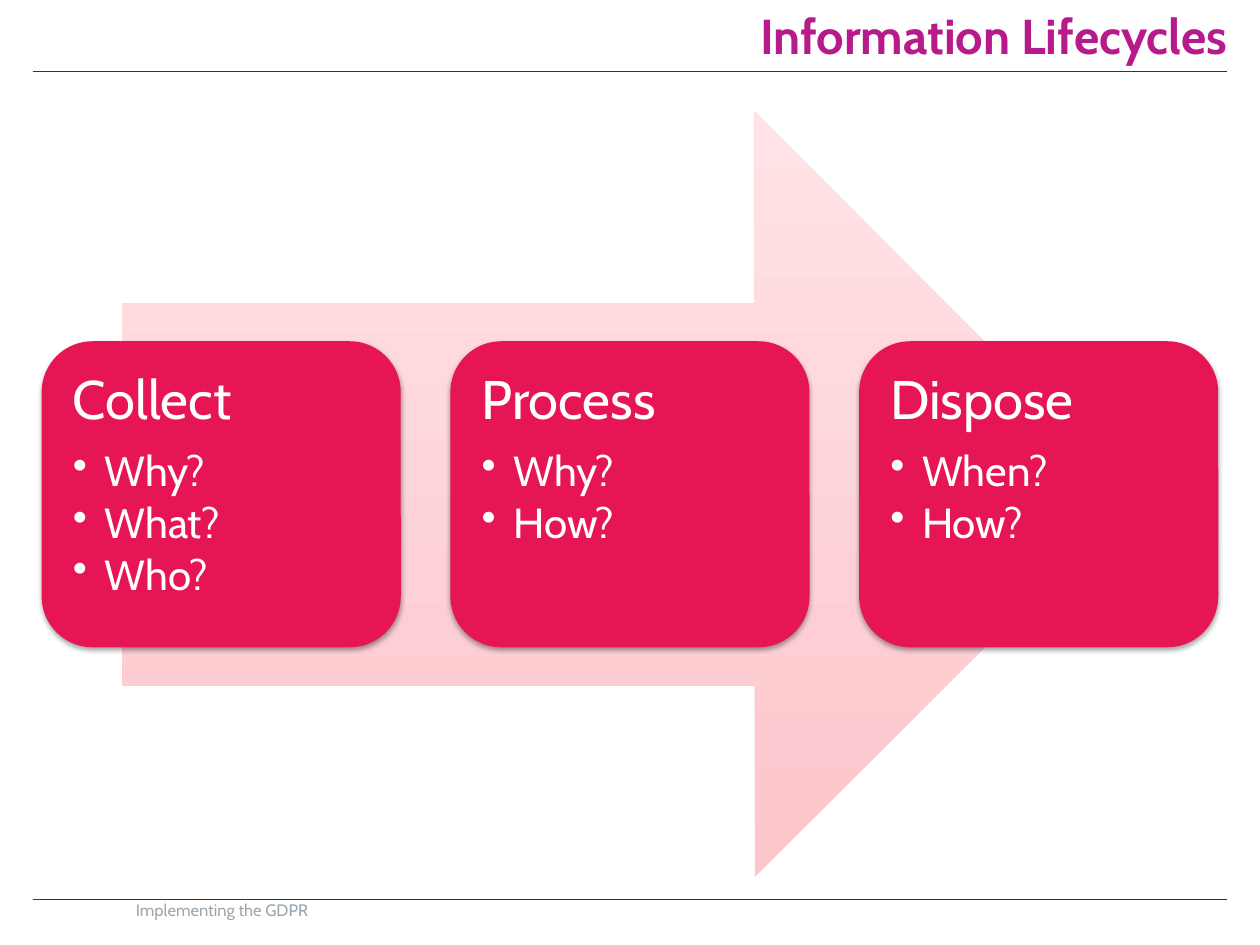
from lxml import etree
from pptx import Presentation
from pptx import util as u
from pptx.dml.color import RGBColor
from pptx.enum import shapes, text
from pptx.oxml import parse_xml
from pptx.oxml.ns import nsdecls, qn

COLORS = {"rule": "2C3841", "title": "B71A8B", "card": "E61554", "white": "FFFFFF",
          "arrow_low": "FCC6CC", "arrow_high": "FFE3E6", "footer": "9BA7B0"}
STAGES = [("Collect", ["Why?", "What?", "Who?"]),
          ("Process", ["Why?", "How?"]),
          ("Dispose", ["When?", "How?"])]
SHADOW = (f'<a:effectLst {nsdecls("a")}><a:outerShdw blurRad="39370" dist="22860" dir="5400000" '
          'rotWithShape="0"><a:srgbClr val="000000"><a:alpha val="35000"/></a:srgbClr>'
          '</a:outerShdw></a:effectLst>')


def set_frame(tf, inset, anchor):
    values = {"word_wrap": True, "auto_size": text.MSO_AUTO_SIZE.NONE, "vertical_anchor": anchor}
    for side in ("left", "top", "right", "bottom"):
        values[f"margin_{side}"] = u.Cm(inset)
    for name, value in values.items():
        setattr(tf, name, value)


def add_text(p, words, size, color, bold=False, **layout):
    for name, value in layout.items():
        setattr(p, name, value)
    r = p.add_run()
    r.text = words
    for name, value in {"name": "Cabin", "size": u.Pt(size), "bold": bold}.items():
        setattr(r.font, name, value)
    r.font.color.rgb = RGBColor.from_string(COLORS[color])


prs = Presentation()
prs.slide_width, prs.slide_height = u.Cm(25.4), u.Cm(19.05)
s = prs.slides.add_slide(prs.slide_layouts[5])

for y in (18.14, 1.45):
    rule = s.shapes.add_connector(shapes.MSO_CONNECTOR.STRAIGHT,
                                  u.Cm(0.66), u.Cm(y), u.Cm(24.74), u.Cm(y))
    rule.line.color.rgb = RGBColor.from_string(COLORS["rule"])
    rule.line.width = u.Pt(0.5)
    etree.SubElement(rule._element.spPr, qn("a:effectLst"))

title = s.shapes.title
title.left, title.top, title.width, title.height = u.Cm(6.3), u.Cm(0), u.Cm(18.44), u.Cm(1.3)
set_frame(title.text_frame, 0, text.MSO_ANCHOR.BOTTOM)
add_text(title.text_frame.paragraphs[0], "Information Lifecycles", 28, "title", True,
         alignment=text.PP_ALIGN.RIGHT)

arrow = s.shapes.add_shape(shapes.MSO_SHAPE.RIGHT_ARROW,
                           u.Cm(2.46), u.Cm(2.26), u.Cm(20.47), u.Cm(15.42))
arrow.shadow.inherit = False
arrow.line.fill.background()
arrow.fill.gradient()
arrow.fill.gradient_angle = 90
for stop, position, color in zip(arrow.fill.gradient_stops, (0, 1), ("arrow_low", "arrow_high")):
    stop.position = position
    stop.color.rgb = RGBColor.from_string(COLORS[color])

for i, (stage, questions) in enumerate(STAGES):
    sp = s.shapes.add_shape(shapes.MSO_SHAPE.ROUNDED_RECTANGLE,
                            u.Cm(0.84 + 8.24 * i), u.Cm(6.88), u.Cm(7.24), u.Cm(6.17))
    sp.fill.solid()
    sp.fill.fore_color.rgb = RGBColor.from_string(COLORS["card"])
    sp.line.fill.background()
    sp._element.spPr.append(parse_xml(SHADOW))
    tf = sp.text_frame
    set_frame(tf, 0.33, text.MSO_ANCHOR.TOP)
    add_text(tf.paragraphs[0], stage, 31, "white", alignment=text.PP_ALIGN.LEFT,
             line_spacing=0.9, space_after=u.Pt(11))
    for question in questions:
        p = tf.add_paragraph()
        pPr = p._p.get_or_add_pPr()
        pPr.set("marL", str(u.Cm(0.64)))
        pPr.set("indent", str(u.Cm(-0.64)))
        etree.SubElement(pPr, qn("a:buChar"), char="•")
        add_text(p, question, 24, "white", level=1, alignment=text.PP_ALIGN.LEFT,
                 line_spacing=0.9, space_after=u.Pt(3.6))

footer = s.shapes.add_textbox(u.Cm(2.74), u.Cm(18.14), u.Cm(19.86), u.Cm(0.66))
set_frame(footer.text_frame, 0, text.MSO_ANCHOR.TOP)
add_text(footer.text_frame.paragraphs[0], "Implementing the GDPR", 9.5, "footer")

prs.save("out.pptx")
